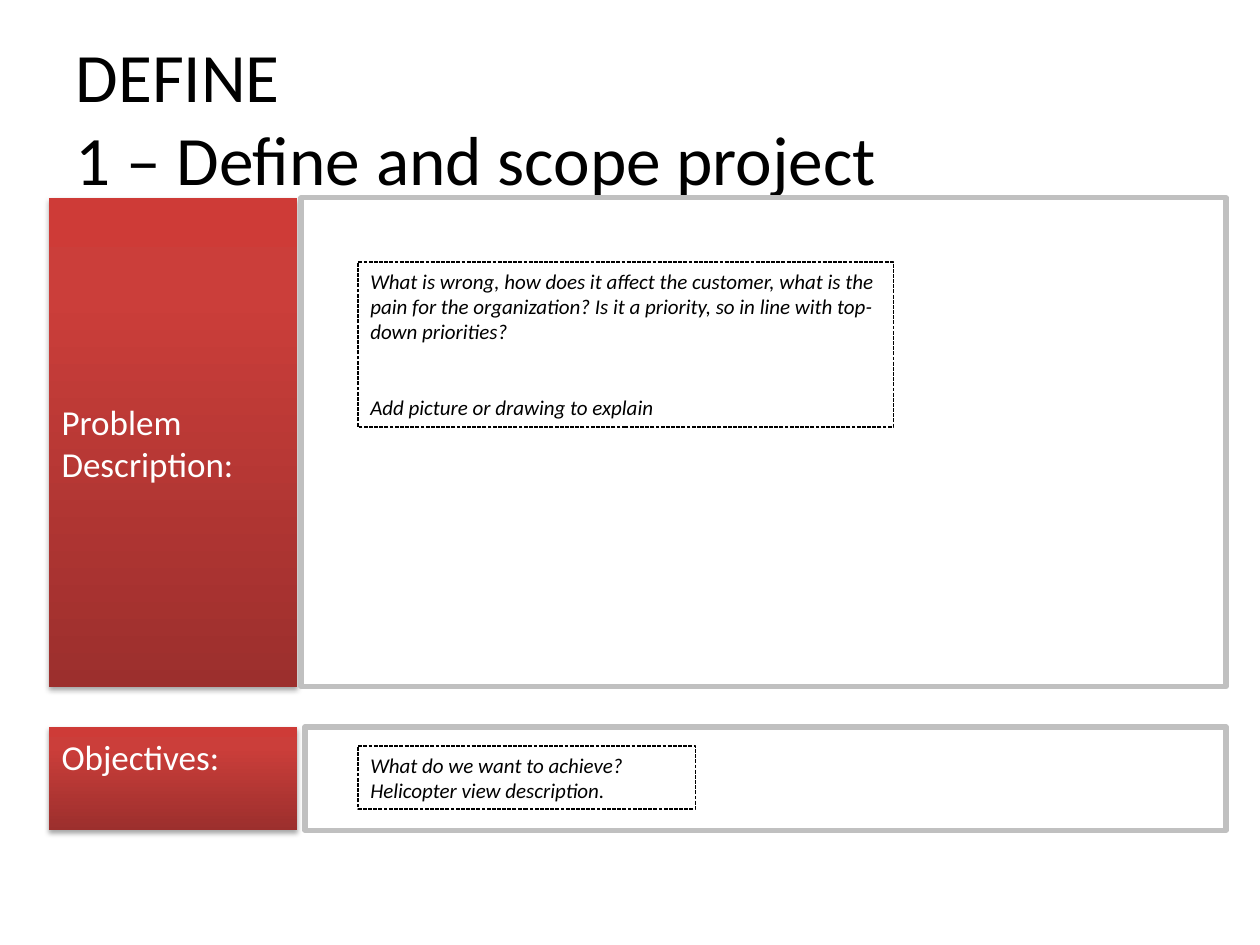
"""Build the DEFINE slide with its problem description and objectives panels."""
from copy import deepcopy

from lxml.etree import SubElement
from pptx import Presentation
from pptx.dml.color import RGBColor
from pptx.enum.dml import MSO_LINE
from pptx.enum.shapes import MSO_SHAPE
from pptx.enum.text import MSO_ANCHOR, MSO_AUTO_SIZE, PP_ALIGN
from pptx.oxml.ns import qn
from pptx.util import Inches, Pt

BLACK = RGBColor(0x00, 0x00, 0x00)
WHITE = RGBColor(0xFF, 0xFF, 0xFF)
GREY = RGBColor(0xC0, 0xC0, 0xC0)
RED_STOPS = [
    (0, RGBColor(0x9C, 0x2F, 0x2D)),
    (0.8, RGBColor(0xCB, 0x3E, 0x3A)),
    (1, RGBColor(0xCE, 0x3B, 0x37)),
]

deck = Presentation()
deck.slide_width, deck.slide_height = Inches(10), Inches(7.5)
COL, ROW = deck.slide_width / 100, deck.slide_height / 100
slide = deck.slides.add_slide(deck.slide_layouts[5])


def write(shape, paragraphs, size, color=BLACK, italic=False,
          anchor=MSO_ANCHOR.MIDDLE, gap=0):
    frame = shape.text_frame
    frame.word_wrap = True
    frame.auto_size = MSO_AUTO_SIZE.NONE
    frame.vertical_anchor = anchor
    for index, text in enumerate(paragraphs):
        paragraph = frame.add_paragraph() if index else frame.paragraphs[0]
        paragraph.text = text
        paragraph.alignment = PP_ALIGN.LEFT
        paragraph.space_before = Pt(gap if index else 0)
        for run in paragraph.runs:
            run.font.name = "Calibri"
            run.font.size = Pt(size)
            run.font.italic = italic
            run.font.color.rgb = color


def add_box(left, top, width, height):
    box = slide.shapes.add_shape(
        MSO_SHAPE.RECTANGLE, round(left * COL), round(top * ROW),
        round(width * COL), round(height * ROW))
    box.shadow.inherit = False
    return box


title = slide.shapes.title
title.left, title.top = round(5 * COL), round(4 * ROW)
title.width, title.height = round(90 * COL), round(16.67 * ROW)
write(title, ["DEFINE\n1 – Define and scope project"], 39.6)

sections = [
    dict(heading="Problem Description:", anchor=MSO_ANCHOR.MIDDLE,
         top=20.93, height=51.73, panel_left=23.9,
         note_top=27.73, note_width=42.5, note_height=17.47, gap=29,
         note=["What is wrong, how does it affect the customer, what is the "
               "pain for the organization? Is it a priority, so in line with "
               "top-down priorities?",
               "Add picture or drawing to explain"]),
    dict(heading="Objectives:", anchor=MSO_ANCHOR.TOP,
         top=76.93, height=10.93, panel_left=24.2,
         note_top=78.93, note_width=26.8, note_height=6.67, gap=0,
         note=["What do we want to achieve?",
               "Helicopter view description."]),
]
PANEL_RIGHT = 97.3

for section in sections:
    heading = add_box(3.9, section["top"], 19.7, section["height"])
    heading.line.fill.background()
    heading.fill.gradient()
    heading.fill.gradient_angle = 90
    properties = heading.element.spPr
    stop_list = properties.find(".//" + qn("a:gsLst"))
    stop_list.append(deepcopy(stop_list[-1]))
    for stop, (position, color) in zip(heading.fill.gradient_stops, RED_STOPS):
        stop.position = position
        stop.color.rgb = color
    shadow = SubElement(properties.find(qn("a:effectLst")), qn("a:outerShdw"),
                        blurRad=str(Pt(3.1)), dist=str(Pt(1.8)),
                        dir="5400000", rotWithShape="0")
    shadow_color = SubElement(shadow, qn("a:srgbClr"), val=str(BLACK))
    SubElement(shadow_color, qn("a:alpha"), val="35000")
    heading.text_frame.margin_top = Inches(0.07)
    heading.text_frame.margin_bottom = Inches(0.07)
    write(heading, [section["heading"]], 20, color=WHITE,
          anchor=section["anchor"])

    panel = add_box(section["panel_left"], section["top"],
                    PANEL_RIGHT - section["panel_left"], section["height"])
    panel.fill.solid()
    panel.fill.fore_color.rgb = WHITE
    panel.line.color.rgb = GREY
    panel.line.width = Pt(3)

for section in sections:
    note = add_box(28.4, section["note_top"],
                   section["note_width"], section["note_height"])
    note.fill.background()
    note.line.color.rgb = BLACK
    note.line.width = Pt(0.75)
    note.line.dash_style = MSO_LINE.SQUARE_DOT
    write(note, section["note"], 12, italic=True,
          anchor=MSO_ANCHOR.TOP, gap=section["gap"])

deck.save("out.pptx")
